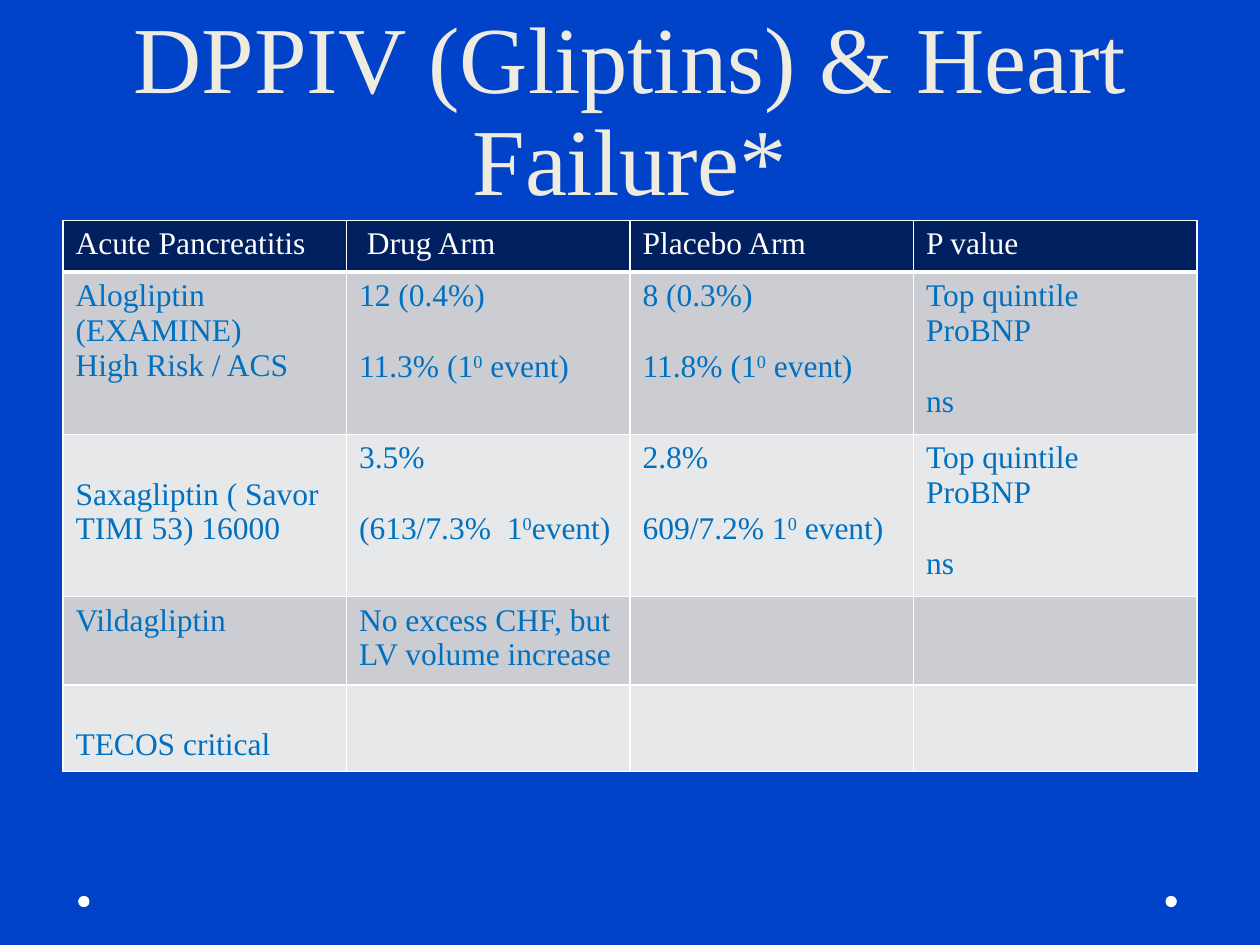
from dataclasses import dataclass

from lxml import etree
from pptx import Presentation
from pptx import util as u
from pptx.dml.color import RGBColor
from pptx.enum import shapes, text
from pptx.oxml import ns


@dataclass(frozen=True)
class Theme:
    font: str = "Times New Roman"
    background: str = "0042C8"
    title_color: str = "EEECE1"
    white: str = "FFFFFF"
    header_fill: str = "002060"
    body_color: str = "0070C0"
    bands: tuple = ("CCCDD2", "E7E8EA")
    title_size: int = 54
    title_leading: int = 58
    table_size: int = 18
    table_leading: float = 20.7
    rule: int = 1
    header_rule: int = 3


class SlideBuilder:
    def __init__(self, slide, theme):
        self.slide = slide
        self.theme = theme
        self.paint(slide.background, theme.background)

    def paint(self, target, color):
        target.fill.solid()
        target.fill.fore_color.rgb = RGBColor.from_string(color)

    def style_runs(self, paragraph, size, color):
        for run in paragraph.runs:
            run.font.name = self.theme.font
            run.font.size = u.Pt(size)
            run.font.color.rgb = RGBColor.from_string(color)

    def title(self, wording, left, top, width, height):
        box = self.slide.shapes.add_textbox(
            u.Inches(left), u.Inches(top), u.Inches(width), u.Inches(height))
        frame = box.text_frame
        frame.word_wrap = True
        frame.vertical_anchor = text.MSO_ANCHOR.BOTTOM
        frame.text = wording
        heading = frame.paragraphs[0]
        heading.alignment = text.PP_ALIGN.CENTER
        heading.line_spacing = u.Pt(self.theme.title_leading)
        self.style_runs(heading, self.theme.title_size, self.theme.title_color)

    def dot(self, left, top, size):
        dot = self.slide.shapes.add_shape(
            shapes.MSO_SHAPE.OVAL, u.Inches(left), u.Inches(top),
            u.Inches(size), u.Inches(size))
        dot.shadow.inherit = False
        self.paint(dot, self.theme.white)
        dot.line.fill.background()

    def table(self, rows, left, top, column_width, row_heights):
        columns = len(rows[0])
        table = self.slide.shapes.add_table(
            len(rows), columns, u.Inches(left), u.Inches(top),
            u.Inches(column_width * columns), u.Inches(sum(row_heights))).table
        for column in table.columns:
            column.width = u.Inches(column_width)
        for r, (entries, height) in enumerate(zip(rows, row_heights)):
            table.rows[r].height = u.Inches(height)
            header = r == 0
            fill = self.theme.header_fill if header else self.theme.bands[(r - 1) % 2]
            color = self.theme.white if header else self.theme.body_color
            for c, lines in enumerate(entries):
                cell = table.cell(r, c)
                self.fill_cell(cell, lines, color)
                self.borders(cell, self.theme.header_rule if header else self.theme.rule)
                self.paint(cell, fill)

    def fill_cell(self, cell, lines, color):
        """Write lines; an empty one becomes a gap, and ^ raises the next character."""
        leading = u.Pt(self.theme.table_leading)
        gap = 0
        first = True
        for line in lines:
            if not line:
                gap = leading
                continue
            frame = cell.text_frame
            paragraph = frame.paragraphs[0] if first else frame.add_paragraph()
            if first:
                cell.margin_top = u.Inches(0.05) + gap
            else:
                paragraph.space_before = gap
            base, _, raised = line.partition("^")
            paragraph.text = base
            if raised:
                exponent = paragraph.add_run()
                exponent.text = raised[0]
                exponent.font._element.set("baseline", "30000")
                paragraph.add_run().text = raised[1:]
            self.style_runs(paragraph, self.theme.table_size, color)
            gap, first = 0, False

    def borders(self, cell, bottom):
        properties = cell._tc.get_or_add_tcPr()
        for side in ("lnL", "lnR", "lnT", "lnB"):
            points = bottom if side == "lnB" else self.theme.rule
            line = etree.SubElement(properties, ns.qn(f"a:{side}"), w=str(u.Pt(points)))
            fill = etree.SubElement(line, ns.qn("a:solidFill"))
            etree.SubElement(fill, ns.qn("a:srgbClr"), val=self.theme.white)


TRIALS = [
    [["Acute Pancreatitis"], [" Drug Arm"], ["Placebo Arm"], ["P value"]],
    [["Alogliptin (EXAMINE)", "High Risk / ACS"],
     ["12 (0.4%)", "", "11.3% (1^0 event)"],
     ["8 (0.3%)", "", "11.8% (1^0 event)"],
     ["Top quintile ProBNP", "", "ns"]],
    [["", "Saxagliptin ( Savor TIMI 53) 16000"],
     ["3.5%", "", "(613/7.3%  1^0event)"],
     ["2.8%", "", "609/7.2% 1^0 event)"],
     ["Top quintile ProBNP", "", "ns"]],
    [["Vildagliptin"], ["No excess CHF, but LV volume increase"], [], []],
    [["", "TECOS critical"], [], [], []],
]


def main():
    deck = Presentation()
    deck.slide_width, deck.slide_height = u.Inches(10), u.Inches(7.5)
    builder = SlideBuilder(deck.slides.add_slide(deck.slide_layouts[6]), Theme())
    for left in (9.25, 0.62):
        builder.dot(left, 7.11, 0.09)
    builder.title("DPPIV (Gliptins) & Heart Failure*", 0.5, 0, 9, 1.75)
    builder.table(TRIALS, 0.5, 1.75, 2.25, [0.41, 1.21, 1.21, 0.65, 0.65])
    deck.save("out.pptx")


if __name__ == "__main__":
    main()
